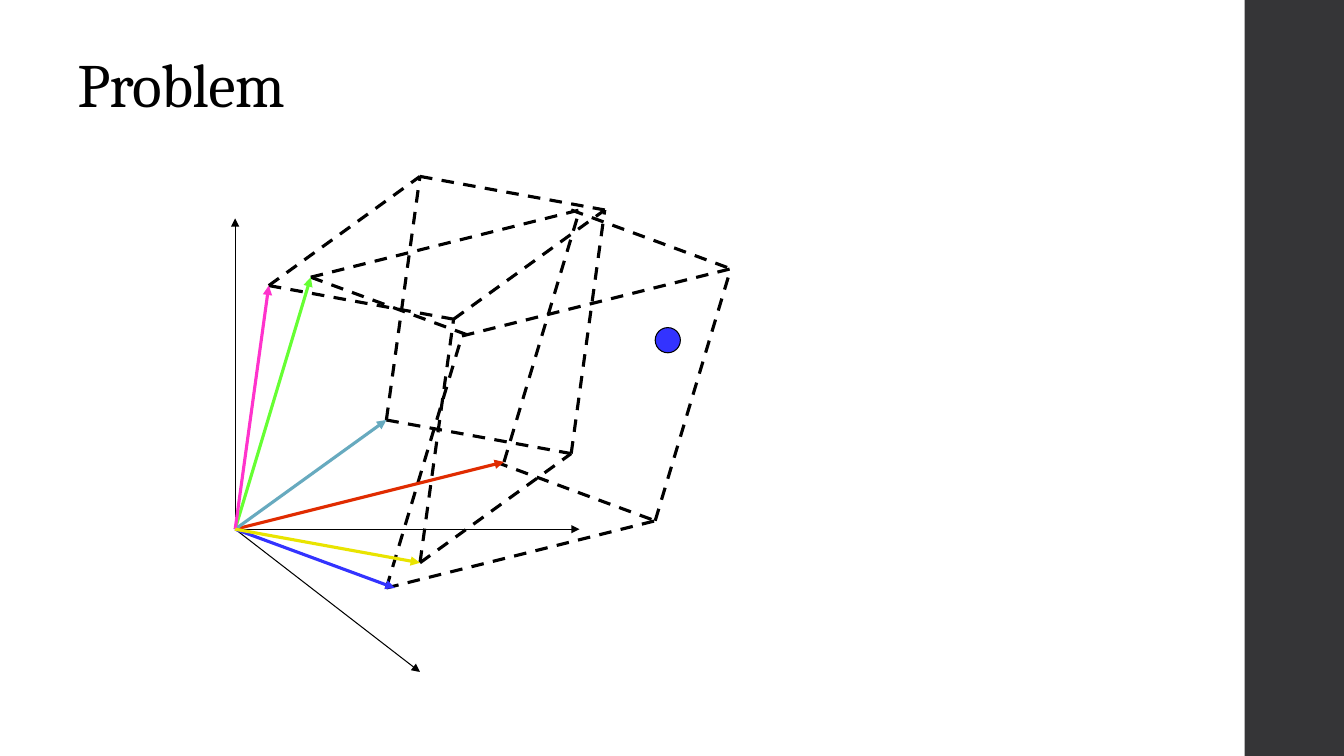
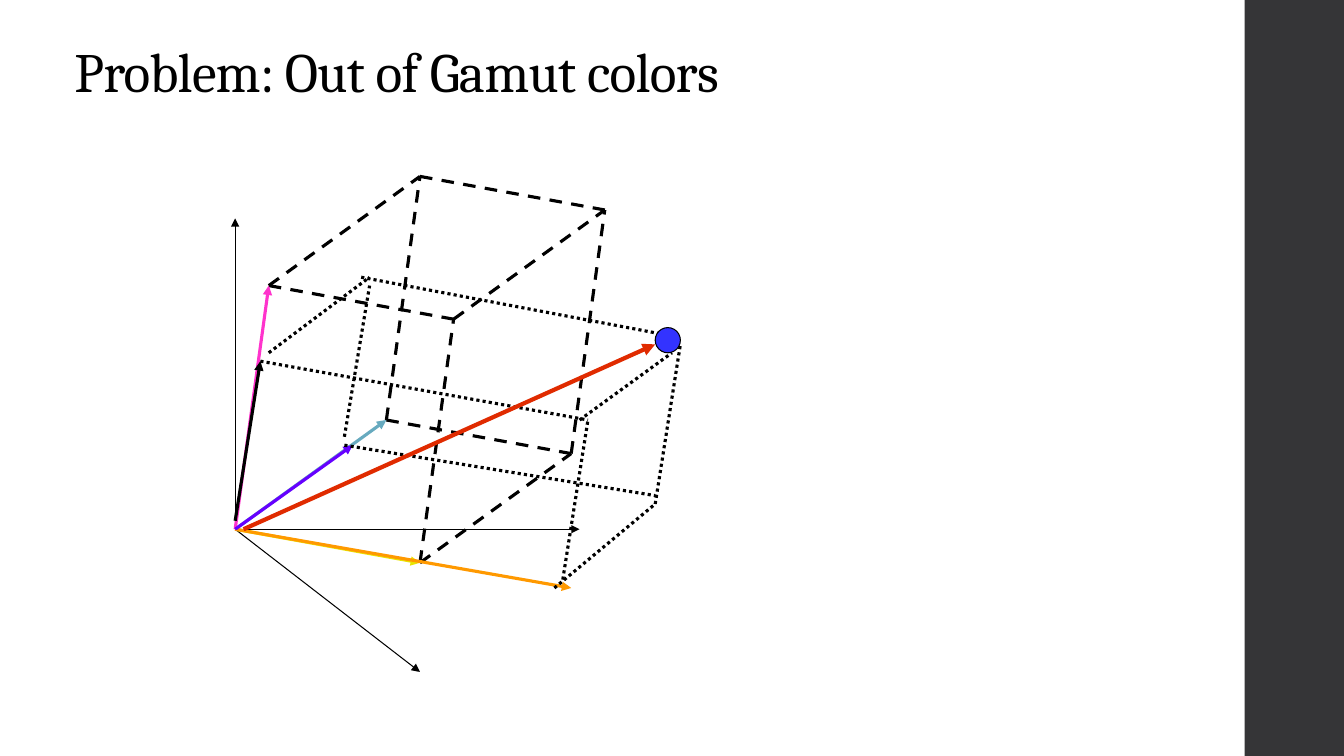
"""Build two slides on colour gamuts drawn as parallelepipeds in a 3D space."""
from itertools import combinations

from lxml import etree
from pptx import Presentation
from pptx.dml.color import RGBColor
from pptx.enum.dml import MSO_LINE
from pptx.enum.shapes import MSO_CONNECTOR, MSO_SHAPE
from pptx.enum.text import MSO_ANCHOR, MSO_AUTO_SIZE, PP_ALIGN
from pptx.oxml.ns import qn
from pptx.util import Pt

STRAIGHT = MSO_CONNECTOR.STRAIGHT
RECTANGLE, OVAL = MSO_SHAPE.RECTANGLE, MSO_SHAPE.OVAL
DASH, DOT = MSO_LINE.DASH, MSO_LINE.ROUND_DOT

BLACK = RGBColor(0x00, 0x00, 0x00)
BAND_GRAY = RGBColor(0x35, 0x35, 0x37)
GREEN = RGBColor(0x66, 0xFF, 0x33)
RED = RGBColor(0xE0, 0x2B, 0x00)
BLUE = RGBColor(0x33, 0x33, 0xFF)
TEAL = RGBColor(0x67, 0xAA, 0xBF)
PINK = RGBColor(0xFF, 0x33, 0xCC)
YELLOW = RGBColor(0xE9, 0xE4, 0x00)
ORANGE = RGBColor(0xFF, 0x99, 0x00)
VIOLET = RGBColor(0x66, 0x00, 0xFF)

FONT = "Cambria"
THIN, THICK, HEAVY = 0.75, 2.25, 3
SLIDE_SIZE = (960, 540)
BAND_BOX = (889, 0, 71, 540)
BALL_BOX = (468, 234, 18, 18)
ORIGIN = (168, 378)

AXIS_ENDS = [(168, 156), (414, 378), (300, 480)]
NARROW_PRIMARIES = [((276, 300), TEAL), ((192, 204), PINK), ((300, 402), YELLOW)]
WIDE_PRIMARIES = [((222, 198), GREEN), ((360, 330), RED), ((282, 420), BLUE)]
WIDE_EDGES = [
    ((222, 198), (414, 150)), ((360, 330), (414, 150)), ((222, 198), (336, 240)),
    ((276, 420), (468, 372)), ((354, 330), (468, 372)), ((468, 372), (522, 192)),
    ((408, 150), (522, 192)), ((330, 240), (522, 192)), ((276, 420), (330, 240)),
]
TARGET_ARROWS = [
    (ORIGIN, (408, 420), ORANGE),
    (ORIGIN, (252, 318), VIOLET),
    ((168, 372), (186, 258), BLACK),
]
TARGET_EDGES = [
    ((246, 318), (468, 354)), ((396, 420), (468, 360)), ((186, 258), (420, 300)),
    ((258, 198), (480, 240)), ((414, 300), (480, 252)), ((192, 252), (264, 198)),
    ((402, 414), (420, 300)), ((468, 360), (486, 246)), ((246, 312), (264, 204)),
]
OUT_OF_GAMUT_ARROW = ((174, 378), (468, 246))

TITLES = [
    {"text": "Problem", "box": (48, 29, 814, 61), "size": 44},
    {"text": "Problem: Out of Gamut colors", "box": (46, 29, 816, 49), "size": 39.6},
]


def apply(target, values):
    for name, value in values.items():
        setattr(target, name, value)


def add_line(shapes, start, end, color=BLACK, width=THICK, dash=None, arrow=False):
    connector = shapes.add_connector(STRAIGHT, *map(Pt, start + end))
    connector.line.color.rgb = color
    apply(connector.line, {"width": Pt(width), "dash_style": dash})
    if arrow:
        etree.SubElement(connector.line._get_or_add_ln(), qn("a:tailEnd"), type="triangle")
    etree.SubElement(connector.element.spPr, qn("a:effectLst"))


def add_shape(shapes, kind, box, color):
    shape = shapes.add_shape(kind, *map(Pt, box))
    shape.shadow.inherit = False
    shape.fill.solid()
    shape.fill.fore_color.rgb = color
    return shape


def prism_edges(corners):
    """Return the nine edges that do not start at the origin."""
    def vertex(group):
        return tuple(base + sum(corner[axis] - base for corner in group)
                     for axis, base in enumerate(ORIGIN))

    return [(vertex(group), vertex(group + (corner,)))
            for size in (1, 2) for group in combinations(corners, size)
            for corner in corners if corner not in group]


def add_gamut(slide, primaries, edges):
    shapes = slide.shapes.add_group_shape().shapes
    for start, end in edges:
        add_line(shapes, start, end, dash=DASH)
    for end, color in primaries:
        add_line(shapes, ORIGIN, end, color, arrow=True)


def add_narrow_gamut(slide):
    add_gamut(slide, NARROW_PRIMARIES, prism_edges([end for end, _ in NARROW_PRIMARIES]))


def add_ball(slide):
    ball = add_shape(slide.shapes, OVAL, BALL_BOX, BLUE)
    ball.line.color.rgb = BLACK
    ball.line.width = Pt(THIN)


def add_slide(presentation, layout, title):
    slide = presentation.slides.add_slide(layout)
    placeholder = slide.shapes.title
    apply(placeholder, dict(zip(("left", "top", "width", "height"), map(Pt, title["box"]))))
    frame = placeholder.text_frame
    apply(frame, {"text": title["text"], "word_wrap": True,
                  "auto_size": MSO_AUTO_SIZE.NONE, "vertical_anchor": MSO_ANCHOR.BOTTOM})
    paragraph = frame.paragraphs[0]
    apply(paragraph, {"alignment": PP_ALIGN.LEFT, "line_spacing": 0.9})
    font = paragraph.runs[0].font
    apply(font, {"name": FONT, "size": Pt(title["size"])})
    font.color.rgb = BLACK
    paragraph.runs[0]._r.get_or_add_rPr().set("spc", "-50")
    for end in AXIS_ENDS:
        add_line(slide.shapes, ORIGIN, end, width=THIN, arrow=True)
    return slide


def add_band(slide, layout):
    band = add_shape(slide.shapes, RECTANGLE, BAND_BOX, BAND_GRAY)
    band.line.fill.background()
    layout.shapes.element.insert(2, band.element)


def main():
    presentation = Presentation()
    apply(presentation, dict(zip(("slide_width", "slide_height"), map(Pt, SLIDE_SIZE))))
    layout = presentation.slide_layouts[5]
    problem, out_of_gamut = [add_slide(presentation, layout, title) for title in TITLES]
    add_band(problem, layout)

    add_gamut(problem, WIDE_PRIMARIES, WIDE_EDGES)
    add_narrow_gamut(problem)
    add_ball(problem)

    add_narrow_gamut(out_of_gamut)
    for start, end, color in TARGET_ARROWS:
        add_line(out_of_gamut.shapes, start, end, color, arrow=True)
    for start, end in TARGET_EDGES:
        add_line(out_of_gamut.shapes, start, end, dash=DOT)
    add_ball(out_of_gamut)
    add_line(out_of_gamut.shapes, *OUT_OF_GAMUT_ARROW, RED, HEAVY, arrow=True)

    presentation.save("out.pptx")


if __name__ == "__main__":
    main()
